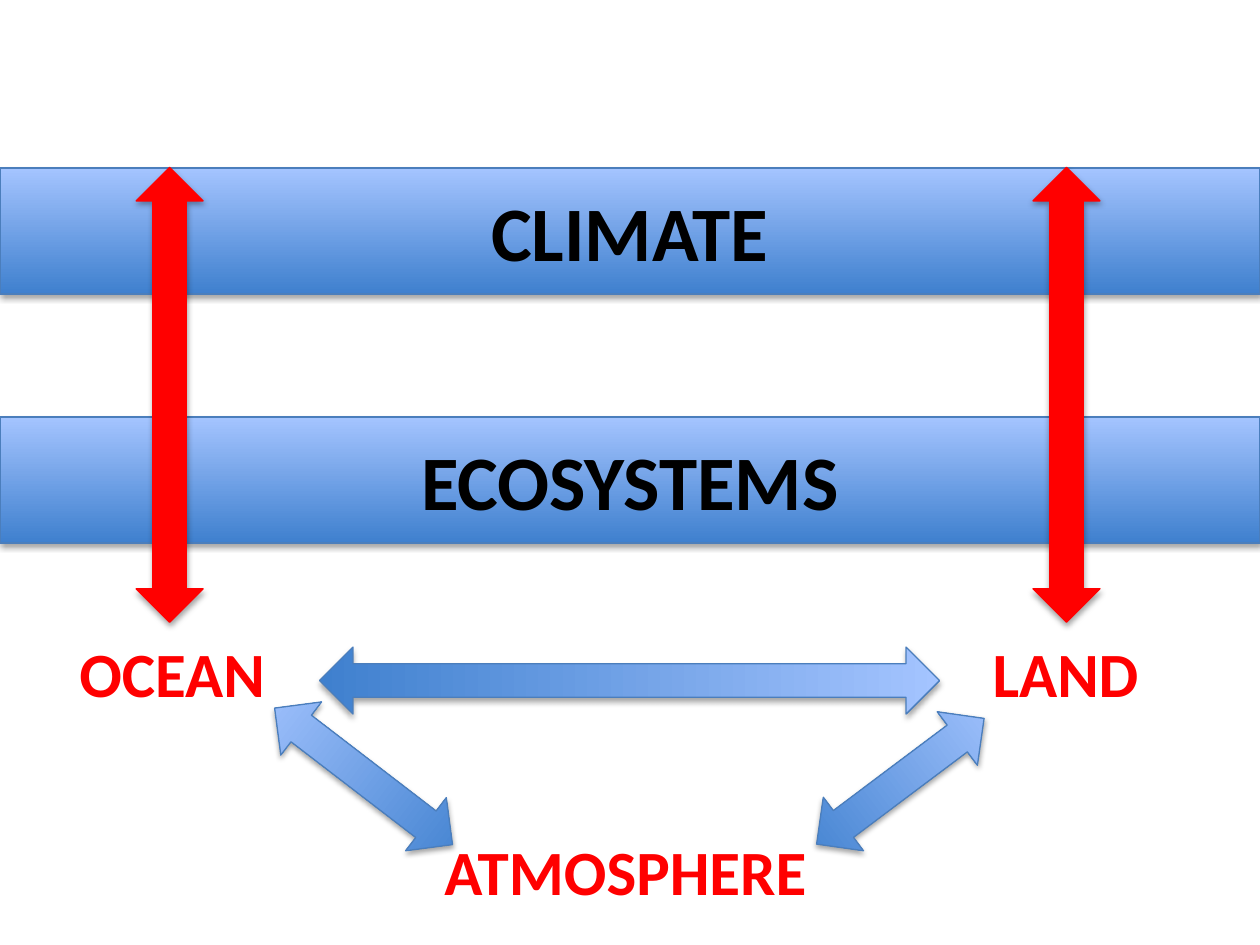
import pptx
import pptx.util
import pptx.dml.color
import pptx.enum.shapes
import pptx.enum.text
import pptx.oxml.ns
from lxml import etree

Cm, Pt = pptx.util.Cm, pptx.util.Pt
SHAPE = pptx.enum.shapes.MSO_SHAPE
qn = pptx.oxml.ns.qn

FONT = "Calibri"
RED, BLACK, EDGE = "FF0000", "000000", "4B7EBC"
GRADIENT = ("3F80CE", "A4C4FF")
WIDTH, HEIGHT = 25.4, 19.05
BAND_HEIGHT, ARROW_WIDTH = 2.54, 1.35
LABEL_HEIGHT = 1.8

BANDS = [("CLIMATE", 3.39), ("ECOSYSTEMS", 8.41)]
LABELS = [
    ("ATMOSPHERE", 8.71, 16.66, 7.98),
    ("OCEAN", 1.35, 12.67, 4.32),
    ("LAND", 19.76, 12.67, 3.48),
]
# center x, center y, length, rotation, solid colour
ARROWS = [
    (3.42, 7.96, 9.17, 0, RED),
    (21.5, 7.96, 9.17, 0, RED),
    (7.33, 15.65, 4.52, 307.5, None),
    (18.15, 15.75, 4.22, 53.1, None),
    (12.69, 13.72, 12.5, 90, None),
]


def rgb(value):
    return pptx.dml.color.RGBColor.from_string(value)


def add_shadow(sp):
    sp.shadow.inherit = False
    effects = sp._element.spPr.find(qn("a:effectLst"))
    shadow = etree.SubElement(effects, qn("a:outerShdw"), blurRad=str(Pt(3.1)),
                              dist=str(Pt(1.8)), dir="5400000", rotWithShape="0")
    color = etree.SubElement(shadow, qn("a:srgbClr"), val=BLACK)
    etree.SubElement(color, qn("a:alpha"), val="35000")


def add_block(s, kind, x, y, w, h, solid=None):
    sp = s.shapes.add_shape(kind, Cm(x), Cm(y), Cm(w), Cm(h))
    if solid:
        sp.fill.solid()
        sp.fill.fore_color.rgb = rgb(solid)
    else:
        sp.fill.gradient()
        sp.fill.gradient_angle = 90
        for stop, position, color in zip(sp.fill.gradient_stops, (0, 1), GRADIENT):
            stop.position = position
            stop.color.rgb = rgb(color)
    sp.line.color.rgb = rgb(solid or EDGE)
    sp.line.width = Pt(0.75)
    add_shadow(sp)
    return sp


def add_text(tf, text, size, color, align):
    p = tf.paragraphs[0]
    p.alignment = align
    r = p.add_run()
    r.text = text
    r.font.name = FONT
    r.font.size = Pt(size)
    r.font.bold = True
    r.font.color.rgb = rgb(color)


def main():
    prs = pptx.Presentation()
    prs.slide_width, prs.slide_height = Cm(WIDTH), Cm(HEIGHT)
    s = prs.slides.add_slide(prs.slide_layouts[6])
    align = pptx.enum.text.PP_ALIGN

    for text, y in BANDS:
        sp = add_block(s, SHAPE.RECTANGLE, 0, y, WIDTH, BAND_HEIGHT)
        sp.text_frame.vertical_anchor = pptx.enum.text.MSO_ANCHOR.MIDDLE
        add_text(sp.text_frame, text, 44, BLACK, align.CENTER)

    for text, x, y, w in LABELS:
        tf = s.shapes.add_textbox(Cm(x), Cm(y), Cm(w), Cm(LABEL_HEIGHT)).text_frame
        tf.word_wrap = False
        tf.auto_size = pptx.enum.text.MSO_AUTO_SIZE.SHAPE_TO_FIT_TEXT
        add_text(tf, text, 36, RED, align.LEFT)

    for cx, cy, length, rotation, solid in ARROWS:
        sp = add_block(s, SHAPE.UP_DOWN_ARROW, cx - ARROW_WIDTH / 2, cy - length / 2,
                       ARROW_WIDTH, length, solid)
        sp.rotation = rotation

    prs.save("out.pptx")


if __name__ == "__main__":
    main()
